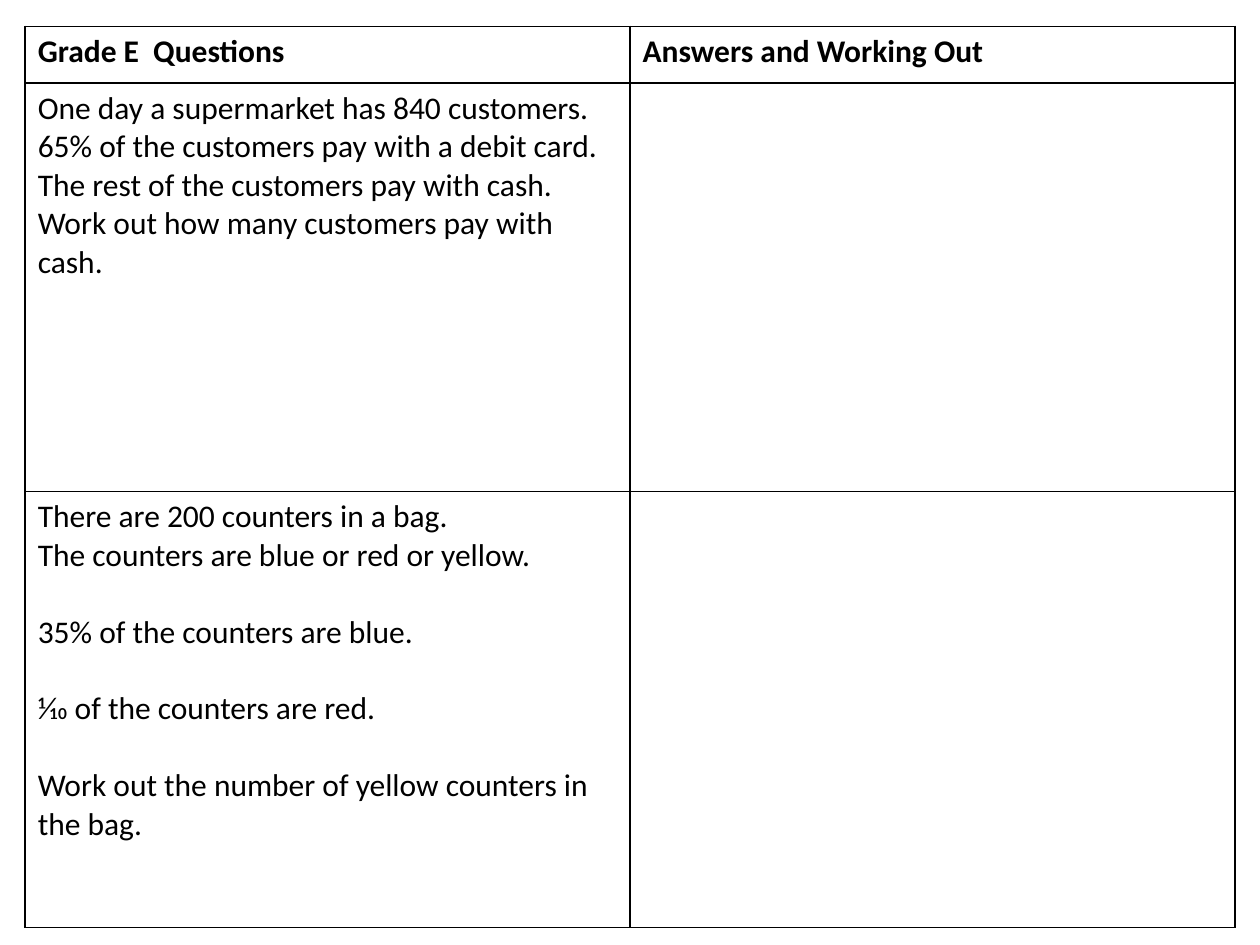
from lxml import etree
from pptx import Presentation
from pptx.dml.color import RGBColor
from pptx.oxml.ns import qn
from pptx.util import Inches, Pt

BLACK = RGBColor(0x00, 0x00, 0x00)
WHITE = RGBColor(0xFF, 0xFF, 0xFF)
LINE_GAP = Pt(22)  # one line of 18 pt text

COLUMN_WIDTH = 4.8
ROW_HEIGHTS = [0.45, 3.24, 3.46]

# Each paragraph: text and the space before it
HEADINGS = [
    [("Grade E  Questions", 0)],
    [("Answers and Working Out", 0)],
]
SUPERMARKET = [
    ("One day a supermarket has 840 customers.", 0),
    ("65% of the customers pay with a debit card.", 0),
    ("The rest of the customers pay with cash.", 0),
    ("Work out how many customers pay with cash.", 0),
]
COUNTERS = [
    ("There are 200 counters in a bag.", 0),
    ("The counters are blue or red or yellow.", 0),
    ("35% of the counters are blue.", LINE_GAP),
    ("1⁄10 of the counters are red.", LINE_GAP),
    ("Work out the number of yellow counters in the bag.", LINE_GAP),
]
ROWS = [HEADINGS, [SUPERMARKET, []], [COUNTERS, []]]


def add_borders(cell):
    properties = cell._tc.get_or_add_tcPr()
    for position, side in enumerate(("a:lnL", "a:lnR", "a:lnT", "a:lnB")):
        border = etree.Element(qn(side), w=str(Pt(1)))
        fill = etree.SubElement(border, qn("a:solidFill"))
        etree.SubElement(fill, qn("a:srgbClr"), val=str(BLACK))
        properties.insert(position, border)


prs = Presentation()
prs.slide_width, prs.slide_height = Inches(10), Inches(7.5)
slide = prs.slides.add_slide(prs.slide_layouts[6])

# Worksheet grid
worksheet = slide.shapes.add_table(
    len(ROWS), 2, Inches(0.2), Inches(0.21),
    Inches(2 * COLUMN_WIDTH), Inches(sum(ROW_HEIGHTS))).table
worksheet.first_row = False
worksheet.horz_banding = False
for column in worksheet.columns:
    column.width = Inches(COLUMN_WIDTH)
for row, height in zip(worksheet.rows, ROW_HEIGHTS):
    row.height = Inches(height)

# Headings, questions and empty answer spaces
for row_number, contents in enumerate(ROWS):
    text_format = {"name": "Calibri", "size": Pt(18), "bold": row_number == 0}
    for column_number, lines in enumerate(contents):
        cell = worksheet.cell(row_number, column_number)
        cell.fill.solid()
        cell.fill.fore_color.rgb = WHITE
        add_borders(cell)
        cell.text = "\n".join(text for text, gap in lines)
        for paragraph, (text, gap) in zip(cell.text_frame.paragraphs, lines):
            paragraph.space_before = gap
            font = paragraph.runs[0].font
            font.color.rgb = BLACK
            for attribute, value in text_format.items():
                setattr(font, attribute, value)

prs.save("out.pptx")
